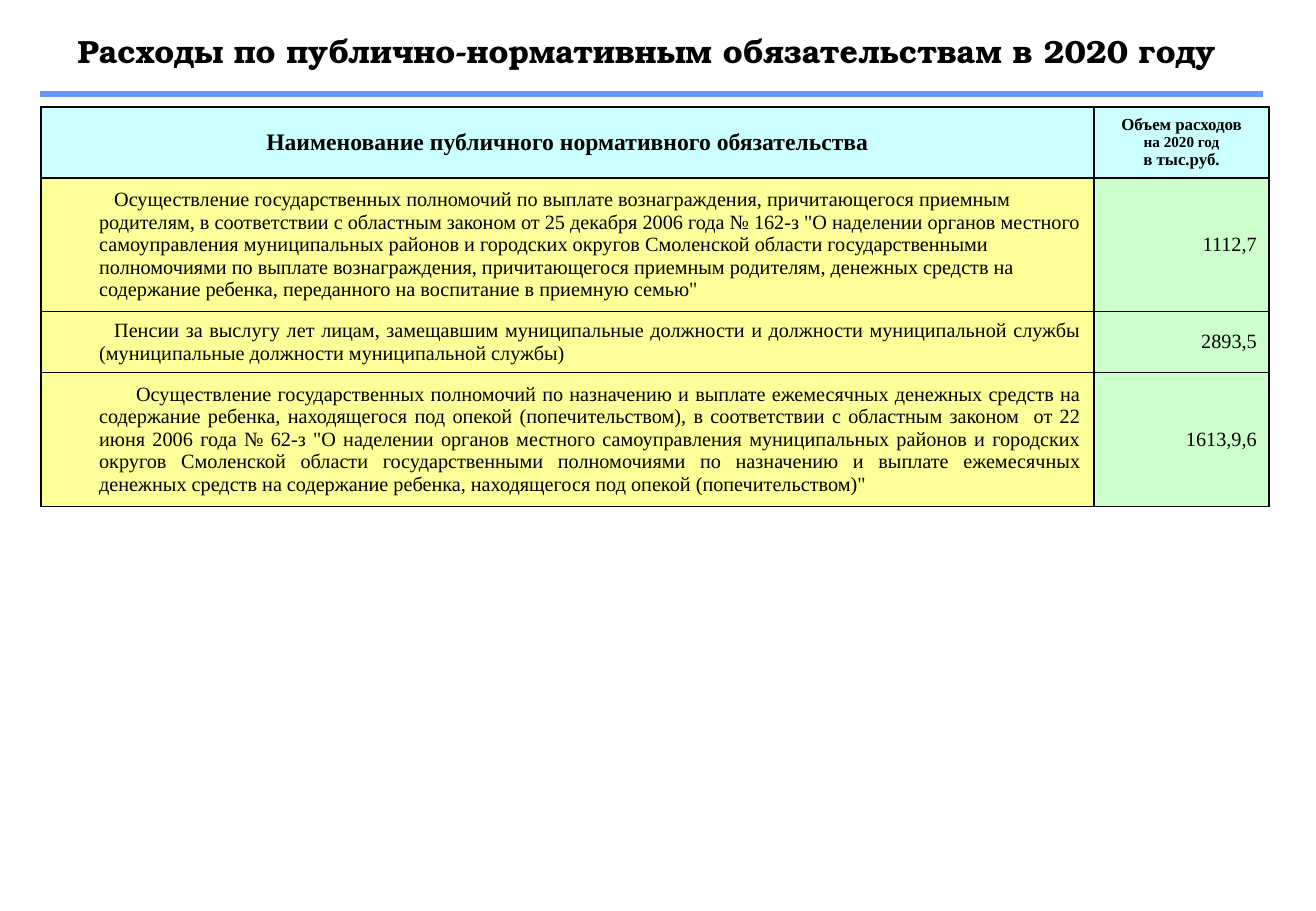
from lxml.etree import SubElement
from pptx import Presentation
from pptx.dml.color import RGBColor
from pptx.enum.shapes import MSO_CONNECTOR
from pptx.enum.text import MSO_ANCHOR, PP_ALIGN as Align
from pptx.oxml.ns import qn
from pptx.util import Pt

PX = 914400 / 121.5
BLACK = RGBColor(0x00, 0x00, 0x00)
WHITE = RGBColor(0xFF, 0xFF, 0xFF)
BLUE = RGBColor(0x66, 0x99, 0xFF)
CYAN = RGBColor(0xCC, 0xFF, 0xFF)
YELLOW = RGBColor(0xFF, 0xFF, 0x99)
GREEN = RGBColor(0xCC, 0xFF, 0xCC)
BODY_FONT = "Times New Roman"


def px(n):
    return round(n * PX)


def add_text(paragraph, text, size, bold=False, align=Align.LEFT, font=BODY_FONT):
    paragraph.alignment = align
    run = paragraph.add_run()
    run.text = text
    run.font.name = font
    run.font.size = Pt(size)
    run.font.bold = bold
    run.font.color.rgb = BLACK


prs = Presentation()
prs.slide_width, prs.slide_height = px(1316), px(911)
slide = prs.slides.add_slide(prs.slide_layouts[6])
slide.background.fill.solid()
slide.background.fill.fore_color.rgb = WHITE

# Title
title = slide.shapes.add_textbox(px(55), px(17), px(1184), px(67)).text_frame
title.word_wrap = True
title.vertical_anchor = MSO_ANCHOR.MIDDLE
add_text(title.paragraphs[0], "Расходы по публично-нормативным обязательствам в 2020 году",
         19, True, Align.CENTER, "TeX Gyre Bonum")

# Rule under the title
rule = slide.shapes.add_connector(MSO_CONNECTOR.STRAIGHT, px(40), px(94), px(1263), px(94))
rule.line.color.rgb = BLUE
rule.line.width = Pt(3.75)
SubElement(rule._element.spPr, qn("a:effectLst"))

# Obligations: text, alignment, first-line indent, amount, row height
obligations = [
    ("Осуществление государственных полномочий по выплате вознаграждения, причитающегося "
     "приемным родителям, в соответствии с областным законом от 25 декабря 2006 года № 162-з "
     "\"О наделении органов местного самоуправления муниципальных районов и городских округов "
     "Смоленской области государственными полномочиями по выплате вознаграждения, "
     "причитающегося приемным родителям, денежных средств на содержание ребенка, переданного "
     "на воспитание в приемную семью\"", Align.LEFT, 15, "1112,7", 125),
    ("Пенсии за выслугу лет лицам, замещавшим муниципальные должности и должности "
     "муниципальной службы (муниципальные должности муниципальной службы)",
     Align.JUSTIFY, 15, "2893,5", 57),
    ("Осуществление государственных полномочий по назначению и выплате ежемесячных денежных "
     "средств на содержание ребенка, находящегося под опекой (попечительством), в соответствии "
     "с областным законом  от 22 июня 2006 года № 62-з \"О наделении органов местного "
     "самоуправления муниципальных районов и городских округов Смоленской области "
     "государственными полномочиями по назначению и выплате ежемесячных денежных средств на "
     "содержание ребенка, находящегося под опекой (попечительством)\"",
     Align.JUSTIFY, 37, "1613,9,6", 125),
]
row_heights = [66] + [row[-1] for row in obligations]
column_widths = [1053, 175]

# Table grid
table = slide.shapes.add_table(len(row_heights), 2, px(41), px(107),
                               px(sum(column_widths)), px(sum(row_heights))).table
for column, width in zip(table.columns, column_widths):
    column.width = px(width)
for row, height in zip(table.rows, row_heights):
    row.height = px(height)

# Cell borders and fills
for r in range(len(row_heights)):
    for c in range(2):
        cell = table.cell(r, c)
        cell.vertical_anchor = MSO_ANCHOR.MIDDLE
        cell_props = cell._tc.get_or_add_tcPr()
        for side in ("lnL", "lnR", "lnT", "lnB"):
            border = SubElement(cell_props, qn("a:" + side), w=str(Pt(1)))
            SubElement(SubElement(border, qn("a:solidFill")), qn("a:srgbClr"), val=str(BLACK))
        cell.fill.solid()
        cell.fill.fore_color.rgb = CYAN if r == 0 else (YELLOW, GREEN)[c]

# Header row
add_text(table.cell(0, 0).text_frame.paragraphs[0],
         "Наименование публичного нормативного обязательства", 14, True, Align.CENTER)
amount_head = table.cell(0, 1).text_frame
for i, (line, size) in enumerate([("Объем расходов", 10), ("на 2020 год", 9), ("в тыс.руб.", 10)]):
    paragraph = amount_head.add_paragraph() if i else amount_head.paragraphs[0]
    add_text(paragraph, line, size, True, Align.CENTER)

# Obligation rows
for r, (obligation, align, indent, amount, _) in enumerate(obligations, start=1):
    paragraph = table.cell(r, 0).text_frame.paragraphs[0]
    add_text(paragraph, obligation, 12, align=align)
    paragraph_props = paragraph._p.get_or_add_pPr()
    paragraph_props.set("marL", str(px(46)))
    paragraph_props.set("indent", str(px(indent)))
    add_text(table.cell(r, 1).text_frame.paragraphs[0], amount, 12, align=Align.RIGHT)

prs.save("out.pptx")
